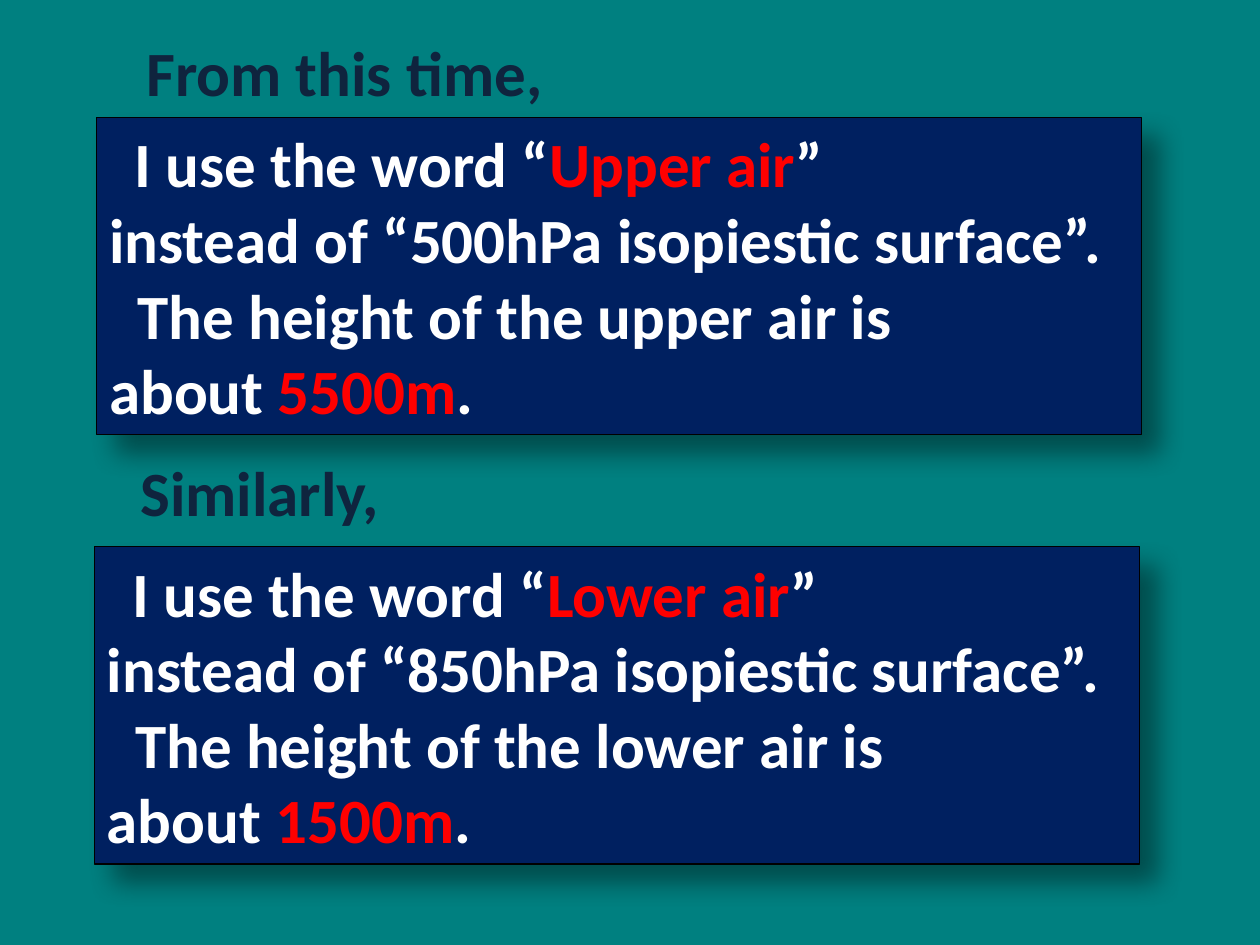
from lxml import etree
from pptx import Presentation
from pptx.dml.color import RGBColor
from pptx.enum import shapes, text
from pptx.oxml import ns
from pptx.util import Pt

TEAL = RGBColor(0x00, 0x80, 0x80)
NAVY = RGBColor(0x00, 0x20, 0x60)
INK = RGBColor(0x0F, 0x24, 0x3E)
BLACK = RGBColor(0x00, 0x00, 0x00)
WHITE = RGBColor(0xFF, 0xFF, 0xFF)
RED = RGBColor(0xFF, 0x00, 0x00)

SHADOW = (
    f'<a:outerShdw {ns.nsdecls("a")} blurRad="{Pt(15)}" dist="{Pt(15)}" '
    'dir="2700000" algn="tl" rotWithShape="0">'
    '<a:srgbClr val="000000"><a:alpha val="40000"/></a:srgbClr></a:outerShdw>'
)


def add_run(paragraph, words, color):
    run = paragraph.add_run()
    run.text = words
    run.font.name = "Calibri"
    run.font.size = Pt(36)
    run.font.bold = True
    run.font.color.rgb = color


def fit_frame(frame):
    frame.word_wrap = False
    frame.auto_size = text.MSO_AUTO_SIZE.SHAPE_TO_FIT_TEXT


prs = Presentation()
prs.slide_width, prs.slide_height = Pt(720), Pt(540)
slide = prs.slides.add_slide(prs.slide_layouts[6])
slide.background.fill.solid()
slide.background.fill.fore_color.rgb = TEAL

# Definitions: left, top, layer, pressure, height
definitions = [
    (55.3, 67, "Upper", "500hPa", "5500m"),
    (54, 312.3, "Lower", "850hPa", "1500m"),
]
for left, top, layer, pressure, height in definitions:
    panel = slide.shapes.add_shape(
        shapes.MSO_SHAPE.RECTANGLE, Pt(left), Pt(top), Pt(597), Pt(181.5))
    panel.fill.solid()
    panel.fill.fore_color.rgb = NAVY
    panel.line.color.rgb = BLACK
    panel.line.width = Pt(0.75)

    # Soft shadow to the lower right
    panel.shadow.inherit = False
    effects = panel._element.spPr.find(ns.qn("a:effectLst"))
    effects.append(etree.fromstring(SHADOW))

    # Each line: first-line indent, then words with their colour
    lines = [
        (14.5, [("I use the word “", WHITE), (f"{layer} air", RED), ("”", WHITE)]),
        (0, [(f"instead of “{pressure} isopiestic surface”.", WHITE)]),
        (16.25, [(f"The height of the {layer.lower()} air is", WHITE)]),
        (0, [("about ", WHITE), (height, RED), (".", WHITE)]),
    ]
    frame = panel.text_frame
    fit_frame(frame)
    for number, (indent, pieces) in enumerate(lines):
        line = frame.add_paragraph() if number else frame.paragraphs[0]
        line.alignment = text.PP_ALIGN.LEFT
        if indent:
            properties = line._p.get_or_add_pPr()
            properties.set("marL", "0")
            properties.set("indent", str(Pt(indent)))
        for words, color in pieces:
            add_run(line, words, color)

# Lead-ins above the panels
lead_ins = [
    ("From this time,", 76.5, 15.4, 243.5),
    ("Similarly,", 73.2, 255.6, 152),
]
for words, left, top, width in lead_ins:
    lead_in = slide.shapes.add_textbox(Pt(left), Pt(top), Pt(width), Pt(51))
    fit_frame(lead_in.text_frame)
    add_run(lead_in.text_frame.paragraphs[0], words, INK)

prs.save("out.pptx")
